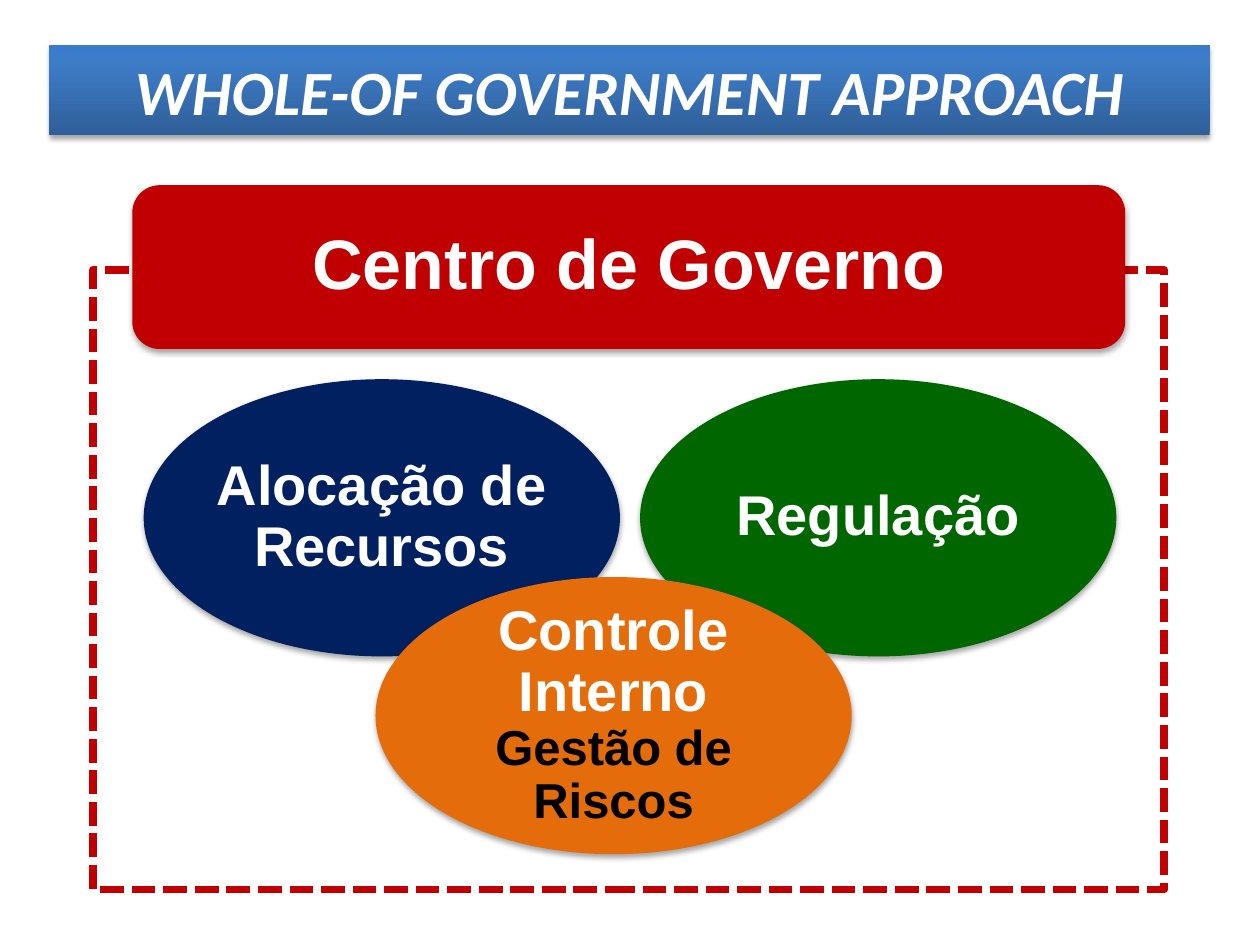
import copy

import lxml.etree
import pptx
import pptx.dml.color
import pptx.enum.dml
import pptx.enum.shapes
import pptx.enum.text
import pptx.oxml.ns
import pptx.util

Inches = pptx.util.Inches
Pt = pptx.util.Pt
RGBColor = pptx.dml.color.RGBColor
SHAPE = pptx.enum.shapes.MSO_SHAPE
qn = pptx.oxml.ns.qn

WHITE = RGBColor(0xFF, 0xFF, 0xFF)
BLACK = RGBColor(0, 0, 0)
RED = RGBColor(0xC0, 0, 0)
NAVY = RGBColor(0, 0x20, 0x60)
GREEN = RGBColor(0, 0x66, 0)
ORANGE = RGBColor(0xE4, 0x6C, 0x0A)
BANNER_STOPS = [
    (0, RGBColor(0x2F, 0x5F, 0x99)),
    (0.8, RGBColor(0x3D, 0x7C, 0xC7)),
    (1, RGBColor(0x3A, 0x7C, 0xCB)),
]


def add_block(slide, preset, box, color=None):
    """Add an unlined shape in box (left, top, width, height), solid if a colour is given."""
    block = slide.shapes.add_shape(preset, *(Inches(length) for length in box))
    block.line.fill.background()
    block.shadow.inherit = False
    if color is not None:
        block.fill.solid()
        block.fill.fore_color.rgb = color
    return block


def add_soft_shadow(block):
    effects = block._element.spPr.find(qn("a:effectLst"))
    shadow = lxml.etree.SubElement(
        effects, qn("a:outerShdw"), blurRad=str(Pt(3.1)), dist=str(Pt(1.8)),
        dir="5400000", rotWithShape="0")
    black = lxml.etree.SubElement(shadow, qn("a:srgbClr"), val="000000")
    lxml.etree.SubElement(black, qn("a:alpha"), val="35000")


def write_label(block, parts, font="Arial", italic=None, spacing=0.9, side=0.16, edge=0.11):
    """Write centred bold parts, each given as (text, size, colour)."""
    frame = block.text_frame
    frame.word_wrap = True
    frame.vertical_anchor = pptx.enum.text.MSO_ANCHOR.MIDDLE
    frame.margin_left = frame.margin_right = Inches(side)
    frame.margin_top = frame.margin_bottom = Inches(edge)
    label = frame.paragraphs[0]
    label.alignment = pptx.enum.text.PP_ALIGN.CENTER
    label.line_spacing = spacing
    for text, size, color in parts:
        run = label.add_run()
        run.text = text
        run.font.name = font
        run.font.size = Pt(size)
        run.font.bold = True
        run.font.italic = italic
        run.font.color.rgb = color


def add_title_banner(slide, box):
    banner = add_block(slide, SHAPE.RECTANGLE, box)
    banner.fill.gradient()
    banner.fill.gradient_angle = 90
    stop_list = next(banner._element.spPr.iter(qn("a:gsLst")))
    stop_list.append(copy.deepcopy(stop_list[-1]))
    for stop, (position, color) in zip(banner.fill.gradient_stops, BANNER_STOPS):
        stop.position = position
        stop.color.rgb = color
    add_soft_shadow(banner)
    write_label(banner, [("WHOLE-OF GOVERNMENT APPROACH", 36, WHITE)],
                font="Calibri", italic=True, spacing=1.0, side=0.1, edge=0.05)


def add_dashed_frame(slide, box):
    border = add_block(slide, SHAPE.RECTANGLE, box)
    border.fill.background()
    border.line.color.rgb = RED
    border.line.width = Pt(4.5)
    border.line.dash_style = pptx.enum.dml.MSO_LINE.SQUARE_DOT


def add_government_center(slide, box):
    center = add_block(slide, SHAPE.ROUNDED_RECTANGLE, box, RED)
    add_soft_shadow(center)
    write_label(center, [("Centro de Governo", 40, WHITE)])


def add_function_oval(slide, box, color, parts, side=0.16):
    oval = add_block(slide, SHAPE.OVAL, box, color)
    add_soft_shadow(oval)
    write_label(oval, parts, side=side)


def add_functions(slide, box):
    """Two ovals side by side, with the third overlapping them below."""
    left, top, width, height = box
    oval_width, oval_height = 3.78, 2.2
    right_left = left + width - oval_width
    bottom_top = top + height - oval_height
    add_function_oval(slide, (left, top, oval_width, oval_height), NAVY,
                      [("Alocação de Recursos", 32, WHITE)], side=0)
    add_function_oval(slide, (right_left, top, oval_width, oval_height), GREEN,
                      [("Regulação", 32, WHITE)])
    add_function_oval(slide, (left + 1.84, bottom_top, oval_width, oval_height), ORANGE,
                      [("Controle Interno ", 32, WHITE), ("Gestão de Riscos", 28, BLACK)])


def main():
    deck = pptx.Presentation()
    deck.slide_width = Inches(10)
    deck.slide_height = Inches(7.5)
    slide = deck.slides.add_slide(deck.slide_layouts[6])

    # Frame behind everything
    add_dashed_frame(slide, (0.74, 2.14, 8.5, 4.92))
    # Government functions and their centre
    add_functions(slide, (1.14, 3.01, 7.72, 3.77))
    add_government_center(slide, (1.05, 1.47, 7.88, 1.3))
    # Title
    add_title_banner(slide, (0.39, 0.36, 9.21, 0.71))

    deck.save("out.pptx")


if __name__ == "__main__":
    main()
